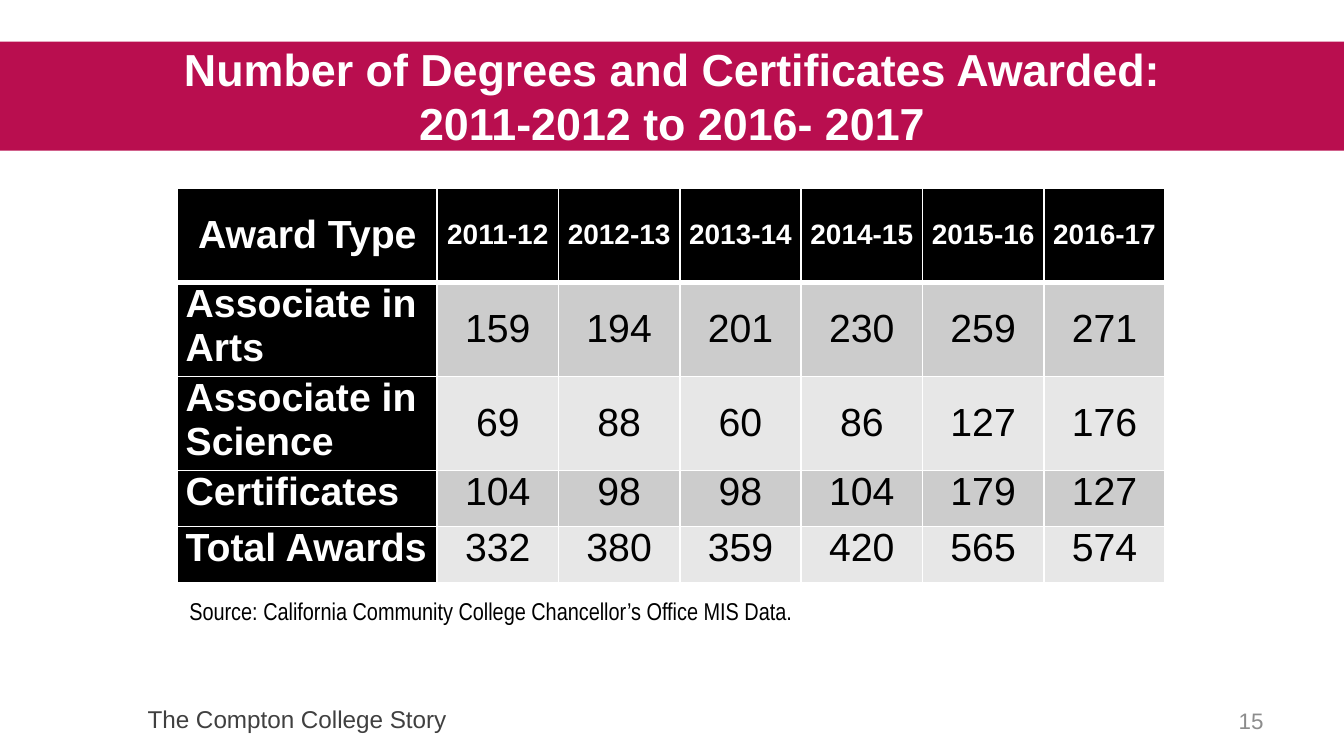
"""Build the slide on degrees and certificates awarded from 2011-2012 to 2016-2017."""
import pptx
import pptx.dml.color
import pptx.enum.shapes
import pptx.enum.text
import pptx.oxml.ns
import pptx.util
from lxml import etree

Pt = pptx.util.Pt
RGB = pptx.dml.color.RGBColor
ALIGN = pptx.enum.text.PP_ALIGN
ANCHOR = pptx.enum.text.MSO_ANCHOR

BLACK = RGB(0x00, 0x00, 0x00)
WHITE = RGB(0xFF, 0xFF, 0xFF)
CRIMSON = RGB(0xB9, 0x0E, 0x4F)
FOOTER_GRAY = RGB(0x40, 0x40, 0x40)
NUMBER_GRAY = RGB(0x8C, 0x8C, 0x8C)
BANDS = [RGB(0xCC, 0xCC, 0xCC), RGB(0xE7, 0xE7, 0xE7)]

AWARDS = [
    ["Award Type", "2011-12", "2012-13", "2013-14", "2014-15", "2015-16", "2016-17"],
    ["Associate in Arts", "159", "194", "201", "230", "259", "271"],
    ["Associate in Science", "69", "88", "60", "86", "127", "176"],
    ["Certificates", "104", "98", "98", "104", "179", "127"],
    ["Total Awards", "332", "380", "359", "420", "565", "574"],
]
COLUMN_WIDTHS = [139] + [65] * 6
ROW_HEIGHTS = [50.4, 50.4, 50.4, 30, 30]


def write_lines(frame, lines, size, color, bold=False, align=ALIGN.LEFT, font="Arial"):
    """Write lines into the first paragraph of a text frame."""
    paragraph = frame.paragraphs[0]
    paragraph.alignment = align
    for index, line in enumerate(lines):
        if index:
            paragraph.add_line_break()
        run = paragraph.add_run()
        run.text = line
        run.font.name = font
        run.font.size = Pt(size)
        run.font.bold = bold
        run.font.color.rgb = color


def add_text(slide, box, lines, size, color, anchor=ANCHOR.TOP, **style):
    """Add a wrapping text box at left, top, width, height."""
    frame = slide.shapes.add_textbox(*map(Pt, box)).text_frame
    frame.word_wrap = True
    frame.vertical_anchor = anchor
    write_lines(frame, lines, size, color, **style)
    return frame


def add_title_band(slide):
    """Add the coloured band behind the title."""
    band = slide.shapes.add_shape(
        pptx.enum.shapes.MSO_SHAPE.RECTANGLE, Pt(0), Pt(22.4), Pt(720), Pt(58.4))
    band.shadow.inherit = False
    band.fill.solid()
    band.fill.fore_color.rgb = CRIMSON
    band.line.fill.background()


def add_borders(cell, top, bottom):
    """Draw white borders around a cell, with given top and bottom widths."""
    properties = cell._tc.get_or_add_tcPr()
    qn = pptx.oxml.ns.qn
    for side, width in (("L", 1), ("R", 1), ("T", top), ("B", bottom)):
        line = etree.SubElement(properties, qn(f"a:ln{side}"), w=str(Pt(width)))
        fill = etree.SubElement(line, qn("a:solidFill"))
        etree.SubElement(fill, qn("a:srgbClr"), val=str(WHITE))


def style_cell(cell, text, row, column):
    """Fill and write one cell according to its place in the table."""
    header, label = row == 0, column == 0
    dark = header or label
    add_borders(cell, top=3 if row == 1 else 1, bottom=3 if header else 1)
    cell.fill.solid()
    cell.fill.fore_color.rgb = BLACK if dark else BANDS[(row - 1) % 2]
    cell.margin_left = cell.margin_right = Pt(4.3)
    cell.margin_top = cell.margin_bottom = Pt(0)
    centered = header or (not label and row < 3)
    cell.vertical_anchor = ANCHOR.MIDDLE if centered else ANCHOR.TOP
    write_lines(
        cell.text_frame, [text],
        size=15 if header and not label else 21,
        color=WHITE if dark else BLACK,
        bold=dark,
        align=ALIGN.LEFT if label and not header else ALIGN.CENTER)


def add_awards_table(slide):
    """Add the table of awards by type and year."""
    table = slide.shapes.add_table(
        len(AWARDS), len(COLUMN_WIDTHS), Pt(95.2), Pt(100.8),
        Pt(sum(COLUMN_WIDTHS)), Pt(sum(ROW_HEIGHTS))).table
    for column, width in zip(table.columns, COLUMN_WIDTHS):
        column.width = Pt(width)
    for row, height in zip(table.rows, ROW_HEIGHTS):
        row.height = Pt(height)
    for row, texts in enumerate(AWARDS):
        for column, text in enumerate(texts):
            style_cell(table.cell(row, column), text, row, column)


def add_source(slide):
    """Add the source line below the table."""
    frame = add_text(
        slide, (96, 316.8, 469.4, 21),
        ["Source: California Community College Chancellor’s Office MIS Data."],
        13, BLACK, font="Arial Narrow")
    frame.margin_left = frame.margin_right = Pt(5.4)
    frame.margin_top = frame.margin_bottom = Pt(2.7)


def main():
    """Build and save the slide."""
    presentation = pptx.Presentation()
    presentation.slide_width = Pt(720)
    presentation.slide_height = Pt(405)
    slide = presentation.slides.add_slide(presentation.slide_layouts[6])
    add_text(slide, (72, 373.7, 396, 21.6), ["The Compton College Story"], 13, FOOTER_GRAY)
    add_title_band(slide)
    add_text(
        slide, (18, 19.4, 684, 63.4),
        ["Number of Degrees and Certificates Awarded:", "2011-2012 to 2016- 2017"],
        24, WHITE, ANCHOR.MIDDLE, bold=True, align=ALIGN.CENTER)
    add_awards_table(slide)
    add_source(slide)
    add_text(slide, (516.2, 375.1, 167.8, 21.6), ["15"], 12, NUMBER_GRAY,
             ANCHOR.MIDDLE, align=ALIGN.RIGHT)
    presentation.save("out.pptx")


if __name__ == "__main__":
    main()
